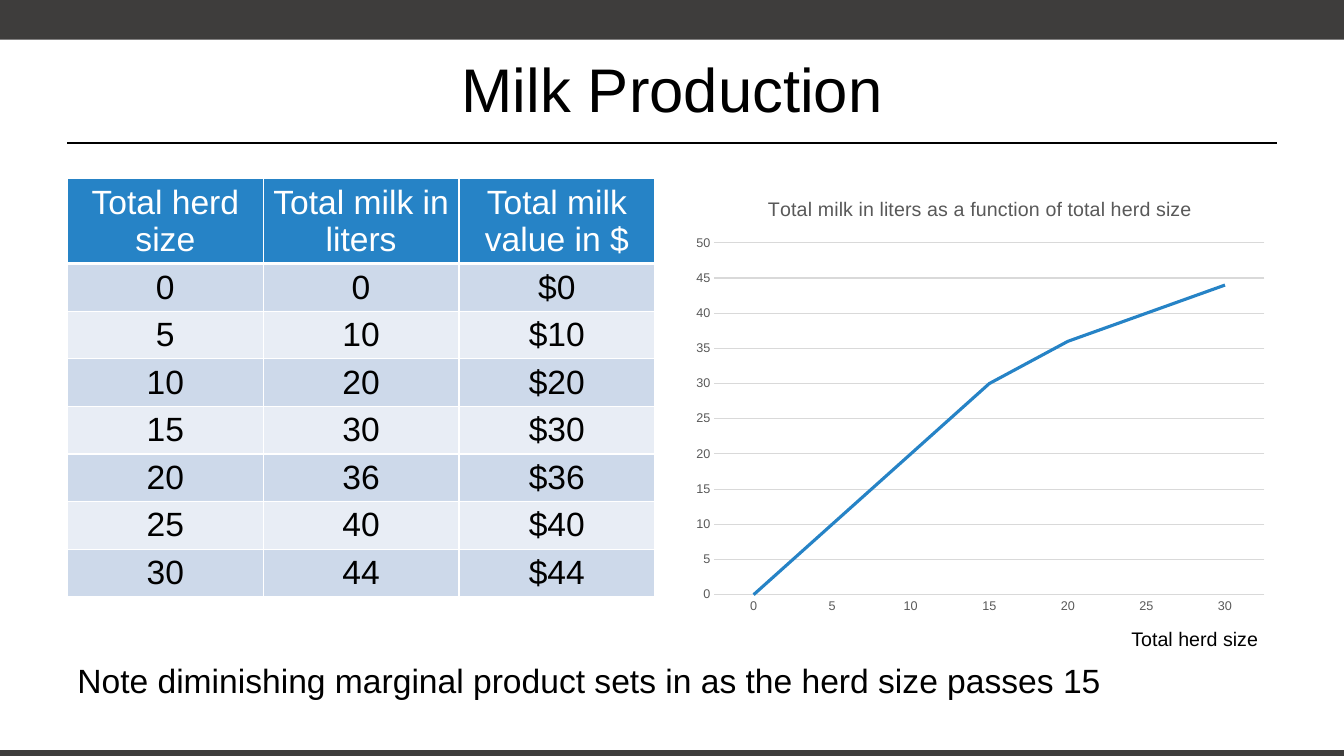
from lxml.etree import SubElement
from pptx import Presentation
from pptx.chart.data import CategoryChartData
from pptx.dml.color import RGBColor
from pptx.enum.chart import XL_CHART_TYPE, XL_TICK_MARK
from pptx.enum.shapes import MSO_CONNECTOR, MSO_SHAPE
from pptx.enum.text import MSO_ANCHOR, MSO_AUTO_SIZE, PP_ALIGN
from pptx.oxml import parse_xml
from pptx.oxml.ns import nsdecls, qn
from pptx.util import Cm, Pt

FONT = "Arial"
DARK, BLACK, WHITE, BLUE = "3E3D3C", "000000", "FFFFFF", "2683C6"
GREY, GRID = "595959", "D9D9D9"
BANDS = ("CDD9EA", "E8EDF5")
SLIDE_WIDTH, SLIDE_HEIGHT = 33.87, 19.05
MARGIN, CONTENT_WIDTH = 1.7, 30.48
HERD_SIZES = [0, 5, 10, 15, 20, 25, 30]
MILK_LITERS = [0, 10, 20, 30, 36, 40, 44]


def color(value):
    """Turn a hex string into a colour."""
    return RGBColor.from_string(value)


def set_font(font, size, shade):
    """Apply the slide's typeface with a size and colour."""
    font.name, font.size, font.bold = FONT, Pt(size), False
    font.color.rgb = color(shade)


def write(frame, text, size=24, shade=BLACK, align=PP_ALIGN.CENTER):
    """Put one formatted paragraph into a text frame."""
    paragraph = frame.paragraphs[0]
    paragraph.alignment = align
    run = paragraph.add_run()
    run.text = text
    set_font(run.font, size, shade)


def style_line(line, shade, width):
    """Give a line its colour and width."""
    line.color.rgb = color(shade)
    line.width = Pt(width)


def add_bar(slide, top, height):
    """Draw a dark bar across the slide."""
    bar = slide.shapes.add_shape(
        MSO_SHAPE.RECTANGLE, 0, Cm(top), Cm(SLIDE_WIDTH), Cm(height))
    bar.shadow.inherit = False
    bar.fill.solid()
    bar.fill.fore_color.rgb = color(DARK)
    bar.line.fill.background()


def add_heading(slide, left, top, width, height):
    """Place the title and the rule near its lower edge."""
    rule_y = Cm(top + height - 0.2)
    rule = slide.shapes.add_connector(
        MSO_CONNECTOR.STRAIGHT, Cm(left), rule_y, Cm(left + width), rule_y)
    style_line(rule.line, BLACK, 1.25)
    SubElement(rule._element.spPr, qn("a:effectLst"))
    title = slide.shapes.title
    title.left, title.top = Cm(left), Cm(top)
    title.width, title.height = Cm(width), Cm(height)
    title.text_frame.vertical_anchor = MSO_ANCHOR.MIDDLE
    write(title.text_frame, "Milk Production", size=44)


def add_borders(cell, bottom):
    """Draw white borders around a table cell."""
    properties = cell._tc.get_or_add_tcPr()
    widths = {"lnL": 1, "lnR": 1, "lnT": 1, "lnB": bottom}
    for place, (side, width) in enumerate(widths.items()):
        properties.insert(place, parse_xml(
            f'<a:{side} {nsdecls("a")} w="{Pt(width)}"><a:solidFill>'
            f'<a:srgbClr val="{WHITE}"/></a:solidFill></a:{side}>'))


def add_milk_table(slide, left, top, width, row_height):
    """Tabulate milk quantity and value by herd size."""
    rows = [("Total herd size", "Total milk in liters", "Total milk value in $")]
    rows += [(str(herd), str(milk), f"${milk}")
             for herd, milk in zip(HERD_SIZES, MILK_LITERS)]
    table = slide.shapes.add_table(
        len(rows), len(rows[0]), Cm(left), Cm(top),
        Cm(width), Cm(row_height * len(rows))).table
    for row_number, row in enumerate(rows):
        is_header = row_number == 0
        for column_number, text in enumerate(row):
            cell = table.cell(row_number, column_number)
            cell.fill.solid()
            cell.fill.fore_color.rgb = color(
                BLUE if is_header else BANDS[(row_number - 1) % 2])
            add_borders(cell, bottom=3 if is_header else 1)
            write(cell.text_frame, text, shade=WHITE if is_header else BLACK)


def add_milk_chart(slide, left, top, width, height):
    """Plot milk against herd size, with the axis caption below."""
    milk_data = CategoryChartData()
    milk_data.categories = [str(herd) for herd in HERD_SIZES]
    milk_data.add_series("Series 1", MILK_LITERS)
    chart = slide.shapes.add_chart(
        XL_CHART_TYPE.LINE, Cm(left), Cm(top), Cm(width), Cm(height),
        milk_data).chart
    set_font(chart.font, 10, BLACK)
    chart.has_legend = False
    chart.has_title = True
    write(chart.chart_title.text_frame, size=14, shade=GREY,
          text="Total milk in liters as a function of total herd size")
    chart.chart_title.include_in_layout = False
    plot = chart.plots[0]
    plot.vary_by_categories = False
    milk_series = plot.series[0]
    milk_series.smooth = False
    style_line(milk_series.format.line, BLUE, 2.25)
    herd_axis, liter_axis = chart.category_axis, chart.value_axis
    for axis in (herd_axis, liter_axis):
        axis.major_tick_mark = axis.minor_tick_mark = XL_TICK_MARK.NONE
        set_font(axis.tick_labels.font, 9, GREY)
    style_line(herd_axis.format.line, GRID, 0.75)
    liter_axis.format.line.fill.background()
    liter_axis.minimum_scale, liter_axis.maximum_scale = 0, 50
    liter_axis.major_unit = 5
    style_line(liter_axis.major_gridlines.format.line, GRID, 0.75)
    add_label(slide, left + width - 3.9, top + height, 3.7, 0.86,
              "Total herd size", wrap=False, size=14)


def add_label(slide, left, top, width, height, text, wrap=True, **text_format):
    """Place a line of free text."""
    frame = slide.shapes.add_textbox(
        Cm(left), Cm(top), Cm(width), Cm(height)).text_frame
    frame.word_wrap = wrap
    frame.auto_size = MSO_AUTO_SIZE.NONE
    write(frame, text, **text_format)


def main():
    """Build the milk production slide."""
    deck = Presentation()
    deck.slide_width, deck.slide_height = Cm(SLIDE_WIDTH), Cm(SLIDE_HEIGHT)
    slide = deck.slides.add_slide(deck.slide_layouts[5])
    add_bar(slide, 0, 1)
    add_bar(slide, 18.9, SLIDE_HEIGHT - 18.9)
    add_heading(slide, MARGIN, 0.64, CONTENT_WIDTH, 3.17)
    add_milk_chart(slide, 17.25, 4.5, 14.91, 11.18)
    add_label(slide, MARGIN, 16.51, CONTENT_WIDTH, 1.27, align=PP_ALIGN.LEFT,
              text="Note diminishing marginal product sets in as the herd size passes 15")
    add_milk_table(slide, MARGIN, 4.5, 14.8, 1.04)
    deck.save("out.pptx")


if __name__ == "__main__":
    main()
